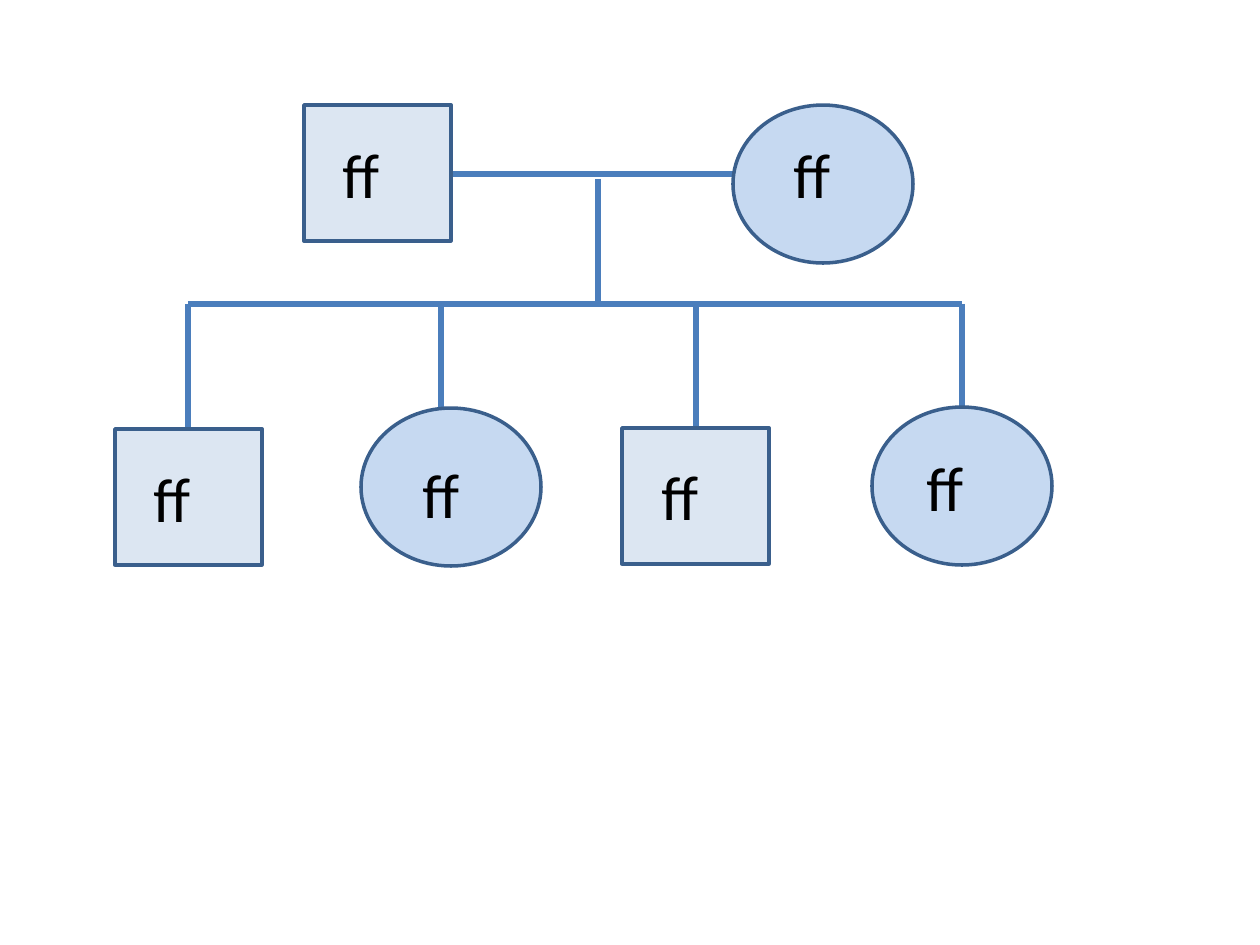
from lxml.etree import SubElement
from pptx import Presentation
from pptx.dml.color import RGBColor
from pptx.enum.shapes import MSO_CONNECTOR as Connector, MSO_SHAPE as Shape
from pptx.enum.text import MSO_AUTO_SIZE as AutoSize
from pptx.oxml.ns import qn
from pptx.util import Emu, Pt

PIXELS_PER_INCH = 126


def px(length):
    return Emu(round(length * 914400 / PIXELS_PER_INCH))


def color(hex_code):
    return RGBColor.from_string(hex_code)


class Pedigree:
    """Draws family members and their connecting lines on one slide."""

    font_name = "Calibri"
    font_size = Pt(36)
    text_color = "000000"
    outline_color = "3A5F8C"
    line_color = "4B7EBC"
    male = (Shape.RECTANGLE, 147, 136, "DCE6F2")
    female = (Shape.OVAL, 180, 158, "C6D9F1")

    def __init__(self, slide):
        self.slide = slide

    def member(self, kind, left, top):
        preset, width, height, fill = kind
        shape = self.slide.shapes.add_shape(
            preset, px(left), px(top), px(width), px(height))
        shape.shadow.inherit = False
        shape.fill.solid()
        shape.fill.fore_color.rgb = color(fill)
        shape.line.color.rgb = color(self.outline_color)
        shape.line.width = Pt(2)

    def genotype(self, text, left, top):
        box = self.slide.shapes.add_textbox(px(left), px(top), px(84), px(89))
        frame = box.text_frame
        frame.word_wrap = True
        frame.auto_size = AutoSize.SHAPE_TO_FIT_TEXT
        paragraph = frame.paragraphs[0]
        paragraph.text = text
        paragraph.font.name = self.font_name
        paragraph.font.size = self.font_size
        paragraph.font.color.rgb = color(self.text_color)

    def line(self, start_x, start_y, end_x, end_y):
        connector = self.slide.shapes.add_connector(
            Connector.STRAIGHT, px(start_x), px(start_y), px(end_x), px(end_y))
        connector.line.color.rgb = color(self.line_color)
        connector.line.width = Pt(3)
        SubElement(connector._element.spPr, qn("a:effectLst"))


def main():
    presentation = Presentation()
    presentation.slide_width = px(1260)
    presentation.slide_height = px(945)
    slide = presentation.slides.add_slide(presentation.slide_layouts[6])
    pedigree = Pedigree(slide)
    male, female = pedigree.male, pedigree.female

    sibling_y = 304
    pedigree.line(598, 179, 598, sibling_y)
    pedigree.line(451, 174, 733, 174)
    pedigree.line(188, sibling_y, 962, sibling_y)
    for drop_x, child_top in ((188, 428), (441, 408), (696, 428), (962, 407)):
        pedigree.line(drop_x, sibling_y, drop_x, child_top)

    members = (
        (male, 304, 105, 330, 129),
        (female, 733, 105, 781, 129),
        (male, 115, 429, 141, 453),
        (female, 361, 408, 410, 449),
        (male, 622, 428, 649, 451),
        (female, 872, 407, 914, 442),
    )
    for kind, left, top, text_left, text_top in members:
        pedigree.member(kind, left, top)
        pedigree.genotype("ff", text_left, text_top)

    presentation.save("out.pptx")


if __name__ == "__main__":
    main()
